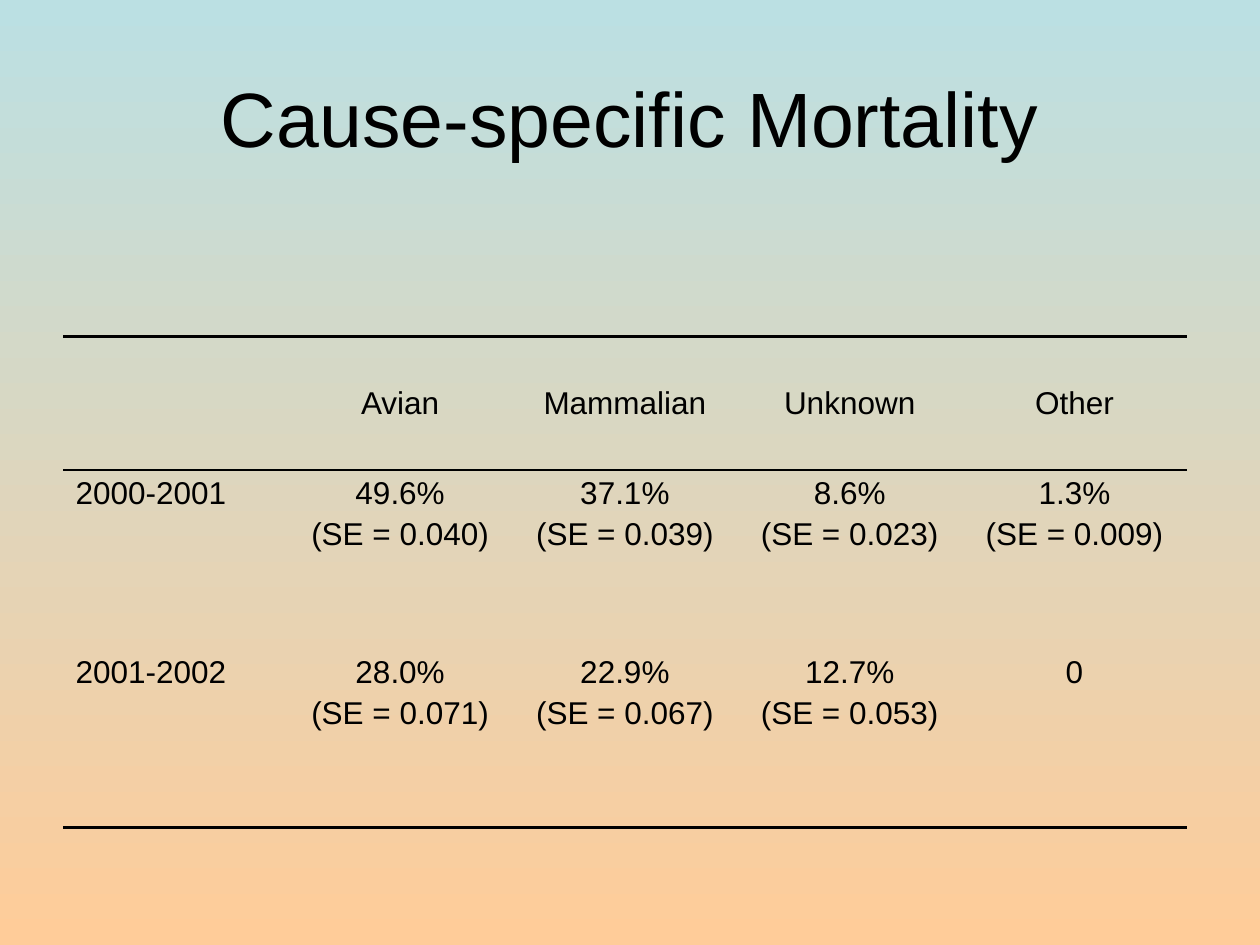
"""Build the cause-specific mortality slide."""
import pptx
import pptx.dml.color
import pptx.enum.text
import pptx.oxml.ns
import pptx.util
from lxml import etree

Inches, Pt = pptx.util.Inches, pptx.util.Pt
PP_ALIGN = pptx.enum.text.PP_ALIGN
MSO_ANCHOR = pptx.enum.text.MSO_ANCHOR
BLACK = pptx.dml.color.RGBColor(0x00, 0x00, 0x00)
SKY = pptx.dml.color.RGBColor(0xBB, 0xE0, 0xE3)
PEACH = pptx.dml.color.RGBColor(0xFF, 0xCC, 0x99)

TITLE = "Cause-specific Mortality"
ROWS = [
    ["", "Avian", "Mammalian", "Unknown", "Other"],
    ["2000-2001", "49.6%\n(SE = 0.040)", "37.1%\n(SE = 0.039)",
     "8.6%\n(SE = 0.023)", "1.3%\n(SE = 0.009)"],
    ["2001-2002", "28.0%\n(SE = 0.071)", "22.9%\n(SE = 0.067)",
     "12.7%\n(SE = 0.053)", "0"],
]
ROW_HEIGHTS = [1.06, 1.42, 1.42]
RULES = [{"T": 2.25, "B": 1}, {"T": 1}, {"B": 2.25}]
TABLE_LEFT, TABLE_TOP, TABLE_WIDTH = 0.5, 2.67, 8.92


def write(tf, text, size=18, align=PP_ALIGN.CENTER, anchor=MSO_ANCHOR.TOP, gap=3):
    tf.word_wrap = True
    tf.vertical_anchor = anchor
    for i, line in enumerate(text.split("\n")):
        p = tf.paragraphs[0] if i == 0 else tf.add_paragraph()
        p.alignment = align
        p.space_before = Pt(gap if i else 0)
        p.font.size = Pt(size)
        if line:
            r = p.add_run()
            r.text = line
            r.font.name = "Arial"
            r.font.size = Pt(size)
            r.font.color.rgb = BLACK


def set_borders(cell, rules):
    qn = pptx.oxml.ns.qn
    tc_pr = cell._tc.get_or_add_tcPr()
    for i, side in enumerate("LRTB"):
        ln = etree.Element(qn(f"a:ln{side}"), w=str(Pt(rules.get(side, 0))))
        if side in rules:
            fill = etree.SubElement(ln, qn("a:solidFill"))
            etree.SubElement(fill, qn("a:srgbClr"), val=str(BLACK))
        else:
            etree.SubElement(ln, qn("a:noFill"))
        tc_pr.insert(i, ln)


def add_mortality_table(s):
    table = s.shapes.add_table(
        len(ROWS), len(ROWS[0]), Inches(TABLE_LEFT), Inches(TABLE_TOP),
        Inches(TABLE_WIDTH), Inches(sum(ROW_HEIGHTS))).table
    table.first_row = table.horz_banding = False
    for i, (row, height, rules) in enumerate(zip(ROWS, ROW_HEIGHTS, RULES)):
        table.rows[i].height = Inches(height)
        for j, text in enumerate(row):
            cell = table.cell(i, j)
            cell.fill.background()
            set_borders(cell, rules)
            write(cell.text_frame, text,
                  align=PP_ALIGN.CENTER if j else PP_ALIGN.LEFT)
            cell.vertical_anchor = MSO_ANCHOR.TOP if i else MSO_ANCHOR.MIDDLE


def main():
    prs = pptx.Presentation()
    prs.slide_width, prs.slide_height = Inches(10), Inches(7.5)
    s = prs.slides.add_slide(prs.slide_layouts[6])
    fill = s.background.fill
    fill.gradient()
    fill.gradient_angle = 270
    for stop, color in zip(fill.gradient_stops, (SKY, PEACH)):
        stop.color.rgb = color

    title = s.shapes.add_textbox(Inches(0.5), Inches(0.3), Inches(9), Inches(1.25))
    write(title.text_frame, TITLE, size=44, anchor=MSO_ANCHOR.MIDDLE)
    add_mortality_table(s)
    prs.save("out.pptx")


if __name__ == "__main__":
    main()
